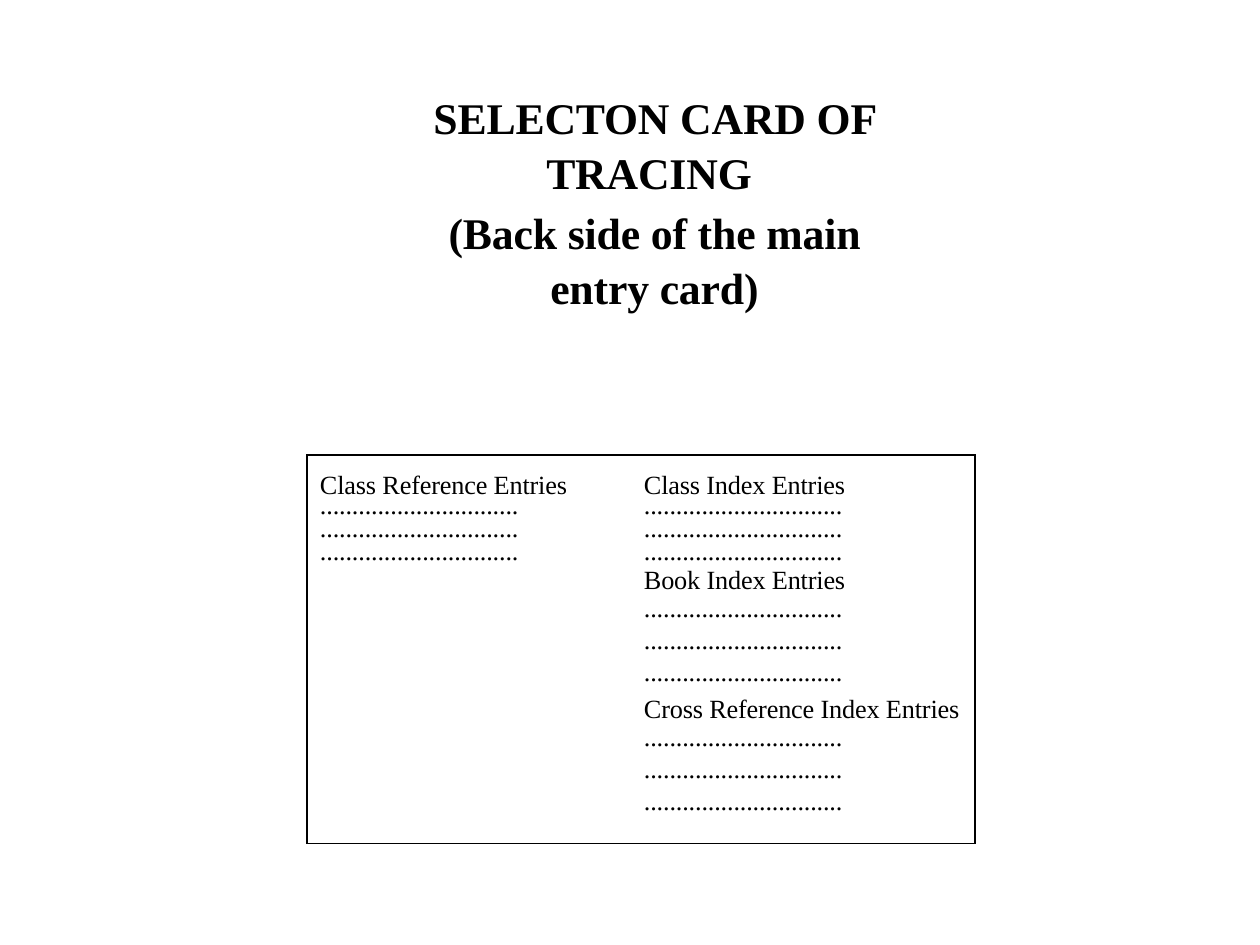
from lxml.etree import SubElement
from pptx import Presentation
from pptx.dml.color import RGBColor
from pptx.enum.text import MSO_ANCHOR, MSO_AUTO_SIZE, PP_ALIGN
from pptx.oxml.ns import qn
from pptx.util import Emu, Pt

SCALE = 914400 // 105
BLACK = "000000"
FONT = "Times New Roman"
DOTS = "." * 31
HEIGHTS = [50, 23, 23, 25, 32, 32, 32, 30, 32, 32, 32, 43]
WIDTHS = [295, 373]
INDENTS = [13, 42]
LEFT = ["Class Reference Entries"] + [DOTS] * 3 + [""] * 8
RIGHT = [
    "Class Index Entries", DOTS, DOTS, DOTS,
    "Book Index Entries", DOTS, DOTS, DOTS,
    "Cross Reference Index Entries", DOTS, DOTS, DOTS,
]


def px(count):
    return Emu(count * SCALE)


def hue(code):
    return RGBColor.from_string(code)


def write(par, text, size=18, bold=False, align=PP_ALIGN.LEFT,
          before=0, pitch=1.0, color=BLACK):
    par.alignment = align
    par.space_before = Pt(before)
    par.line_spacing = pitch
    if text:
        run = par.add_run()
        run.text = text
        run.font.name = FONT
        run.font.size = Pt(size)
        run.font.bold = bold
        run.font.color.rgb = hue(color)
        run.font._element.set("spc", "-10")


def add_title(slide, lines):
    title = slide.shapes.title
    title.left, title.top = px(400), px(82)
    title.width, title.height = px(509), px(225)
    frame = title.text_frame
    frame.word_wrap = True
    frame.auto_size = MSO_AUTO_SIZE.NONE
    frame.vertical_anchor = MSO_ANCHOR.TOP
    frame.margin_left = frame.margin_right = frame.margin_bottom = 0
    frame.margin_top = px(6)
    for index, (text, before) in enumerate(lines):
        par = frame.add_paragraph() if index else frame.paragraphs[0]
        write(par, text, size=30, bold=True, align=PP_ALIGN.CENTER,
              before=before, pitch=1.05)


def set_edges(cell, sides):
    props = cell._tc.get_or_add_tcPr()
    for place, side in enumerate("LRTB"):
        line = props.makeelement(qn(f"a:ln{side}"), {"w": str(Pt(1))})
        props.insert(place, line)
        if side in sides:
            fill = SubElement(line, qn("a:solidFill"))
            SubElement(fill, qn("a:srgbClr"), val=BLACK)
        else:
            SubElement(line, qn("a:noFill"))


def fill_cell(cell, text, indent, top):
    cell.fill.background()
    cell.vertical_anchor = MSO_ANCHOR.TOP
    cell.margin_left = px(indent)
    cell.margin_right = cell.margin_bottom = 0
    cell.margin_top = px(top)
    cell.text_frame.word_wrap = True
    write(cell.text_frame.paragraphs[0], text, pitch=Pt(10.6))


def add_card(slide):
    count = len(HEIGHTS)
    frame = slide.shapes.add_table(
        count, 2, px(307), px(455), px(sum(WIDTHS)), px(sum(HEIGHTS)))
    table = frame.table
    table.first_row = table.horz_banding = False
    for row, height in zip(table.rows, HEIGHTS):
        row.height = px(height)
    for col, texts in enumerate((LEFT, RIGHT)):
        table.columns[col].width = px(WIDTHS[col])
        for row, text in enumerate(texts):
            cell = table.cell(row, col)
            top = 30 if row == 0 else 4 if text.endswith("Entries") else 0
            fill_cell(cell, text, INDENTS[col], top)
            sides = "LR"[col]
            sides += "T" if row == 0 else "B" if row == count - 1 else ""
            set_edges(cell, sides)


def main():
    deck = Presentation()
    deck.slide_width, deck.slide_height = px(1260), px(945)
    slide = deck.slides.add_slide(deck.slide_layouts[5])
    slide.background.fill.solid()
    slide.background.fill.fore_color.rgb = hue("FFFFFF")
    add_title(slide, [
        ("SELECTON CARD OF TRACING ", 4.6),
        ("(Back side of the main entry card)", 3.6),
    ])
    add_card(slide)
    deck.save("out.pptx")


if __name__ == "__main__":
    main()
